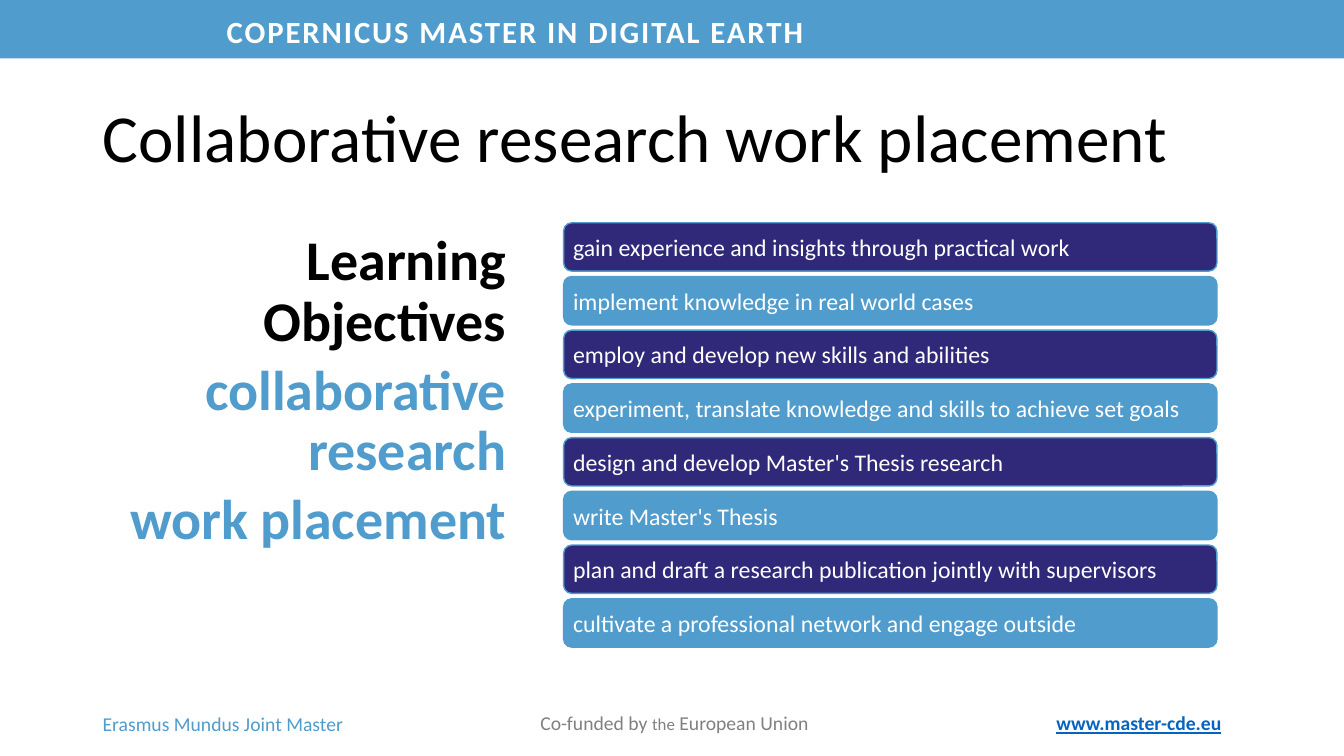
from pptx import Presentation
from pptx.dml.color import RGBColor
from pptx.enum.shapes import MSO_SHAPE as SHAPE
from pptx.enum.text import MSO_ANCHOR as ANCHOR, PP_ALIGN as ALIGN
from pptx.util import Inches, Pt

BLUE = RGBColor(0x50, 0x9C, 0xCD)
INDIGO = RGBColor(0x30, 0x28, 0x78)
LINK_BLUE = RGBColor(0x05, 0x63, 0xC1)
GRAY = RGBColor(0x80, 0x80, 0x80)
BLACK = RGBColor(0, 0, 0)
WHITE = RGBColor(0xFF, 0xFF, 0xFF)

prs = Presentation()
prs.slide_width, prs.slide_height = Inches(13.33), Inches(7.5)
slide = prs.slides.add_slide(prs.slide_layouts[6])


def style(font, size, color, bold=False):
    font.name, font.size, font.bold = "Calibri", Pt(size), bold
    font.color.rgb = color


def add_text(left, top, width, height, lines, size, color, bold=False,
             align=ALIGN.LEFT, anchor=ANCHOR.TOP):
    box = slide.shapes.add_textbox(Inches(left), Inches(top), Inches(width), Inches(height))
    frame = box.text_frame
    frame.word_wrap = True
    frame.vertical_anchor = anchor
    frame.text = lines
    for paragraph in frame.paragraphs:
        paragraph.alignment = align
        for run in paragraph.runs:
            style(run.font, size, color, bold)
    return frame


# Header band
band = slide.shapes.add_shape(SHAPE.RECTANGLE, 0, 0, prs.slide_width, Inches(0.58))
band.shadow.inherit = False
band.fill.solid()
band.fill.fore_color.rgb = BLUE
band.line.fill.background()
programme = add_text(2.15, 0.06, 8.2, 0.5, "COPERNICUS MASTER IN DIGITAL EARTH",
                     22, WHITE, bold=True, anchor=ANCHOR.MIDDLE)
programme.paragraphs[0].runs[0].font._element.set("spc", "140")

# Title
title = add_text(0.92, 1.05, 11.5, 0.8, "Collaborative research work placement", 48, BLACK)
title.paragraphs[0].line_spacing = 0.8

# Left heading
heading = add_text(0.81, 2.19, 4.31, 3.4,
                   "Learning Objectives\ncollaborative research\nwork placement",
                   40, BLUE, bold=True, align=ALIGN.RIGHT, anchor=ANCHOR.MIDDLE)
for paragraph in heading.paragraphs:
    paragraph.line_spacing = 0.9
    paragraph.space_after = Pt(6)
heading.paragraphs[0].runs[0].font.color.rgb = BLACK

# Objective bars in alternating colours
objectives = [
    "gain experience and insights through practical work",
    "implement knowledge in real world cases",
    "employ and develop new skills and abilities",
    "experiment, translate knowledge and skills to achieve set goals",
    "design and develop Master's Thesis research",
    "write Master's Thesis",
    "plan and draft a research publication jointly with supervisors",
    "cultivate a professional network and engage outside",
]
first_top, last_top = 2.21, 5.94
pitch = (last_top - first_top) / (len(objectives) - 1)
for i, objective in enumerate(objectives):
    bar = slide.shapes.add_shape(SHAPE.ROUNDED_RECTANGLE, Inches(5.59),
                                 Inches(first_top + i * pitch), Inches(6.48), Inches(0.48))
    bar.shadow.inherit = False
    bar.fill.solid()
    bar.fill.fore_color.rgb = BLUE if i % 2 else INDIGO
    bar.line.color.rgb = BLUE
    bar.line.width = Pt(1)
    frame = bar.text_frame
    frame.word_wrap = True
    frame.vertical_anchor = ANCHOR.MIDDLE
    frame.margin_left = frame.margin_right = Inches(0.07)
    frame.margin_top = frame.margin_bottom = Inches(0.07)
    frame.text = objective
    frame.paragraphs[0].alignment = ALIGN.LEFT
    style(frame.paragraphs[0].runs[0].font, 17, WHITE)

# Footer
add_text(0.92, 7.01, 4.14, 0.34, "Erasmus Mundus Joint Master", 14, BLUE)
funding = add_text(3.14, 7, 7.1, 0.34, "Co-funded by ", 14, GRAY, align=ALIGN.CENTER)
for words, size in [("the", 12), (" European Union", 14)]:
    run = funding.paragraphs[0].add_run()
    run.text = words
    style(run.font, size, GRAY)
website = add_text(10.38, 6.99, 2.06, 0.36, "www.master-cde.eu", 14, LINK_BLUE,
                   bold=True, anchor=ANCHOR.MIDDLE)
website.paragraphs[0].runs[0].font.underline = True

prs.save("out.pptx")
